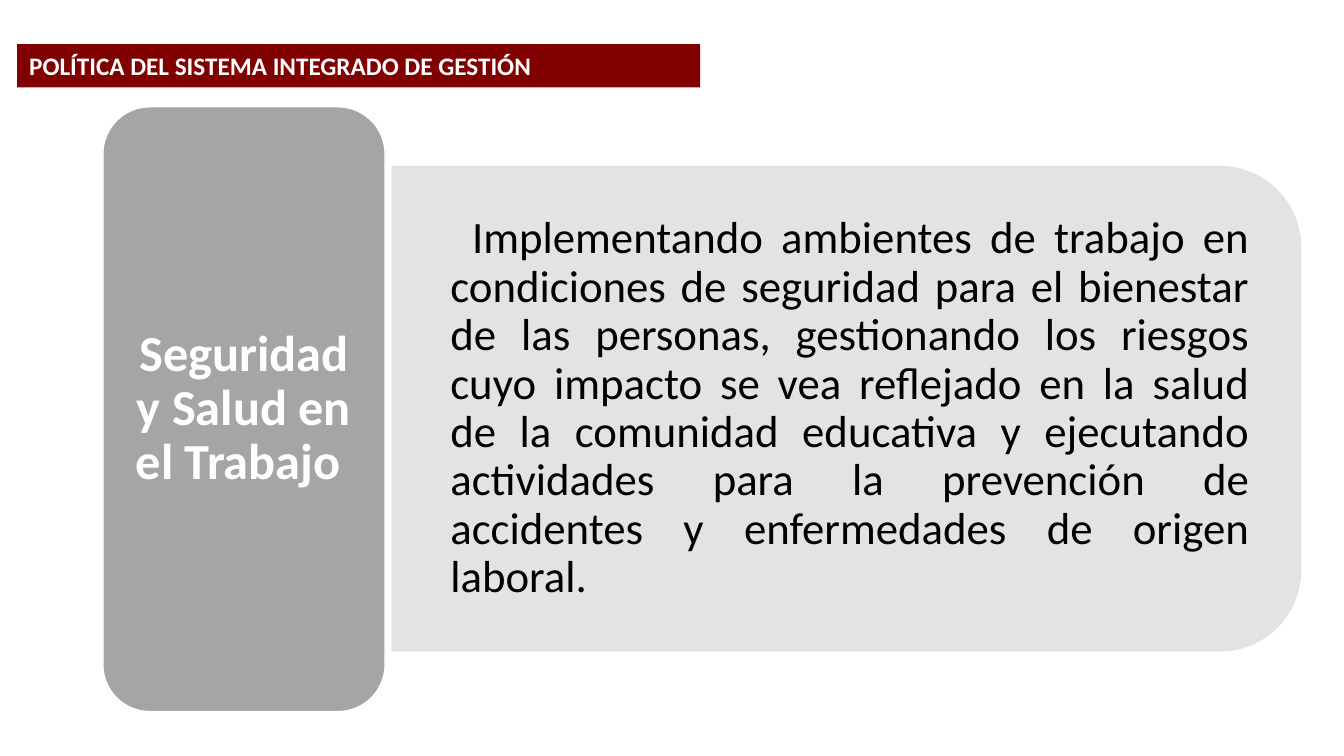
from dataclasses import dataclass

from lxml.etree import SubElement
from pptx import Presentation
from pptx.dml.color import RGBColor
from pptx.enum.shapes import MSO_SHAPE as Shape
from pptx.enum.text import MSO_ANCHOR as Anchor, PP_ALIGN as Align
from pptx.oxml.ns import qn
from pptx.util import Pt


@dataclass(frozen=True)
class Theme:
    font: str = "Calibri"
    banner: str = "800000"
    tile: str = "A5A5A5"
    panel: str = "E1E1E1"
    light: str = "FFFFFF"
    dark: str = "000000"
    title_size: int = 18
    body_size: int = 32
    tile_size: int = 36
    opacity: int = 90


THEME = Theme()


def write_text(shape, text, size, color, bold=False, align=Align.LEFT,
               anchor=Anchor.MIDDLE, insets=(0, 0), spacing=1.0,
               margin=0, first_indent=0):
    frame = shape.text_frame
    frame.word_wrap = True
    frame.vertical_anchor = anchor
    frame.margin_left = frame.margin_right = Pt(insets[0])
    frame.margin_top = frame.margin_bottom = Pt(insets[1])
    para = frame.paragraphs[0]
    para.alignment = align
    para.line_spacing = spacing
    if margin:
        properties = para._p.get_or_add_pPr()
        properties.set("marL", str(Pt(margin)))
        properties.set("indent", str(Pt(first_indent)))
    span = para.add_run()
    span.text = text
    span.font.name = THEME.font
    span.font.size = Pt(size)
    span.font.bold = bold
    span.font.color.rgb = RGBColor.from_string(color)


def add_block(page, kind, box, fill, line=None, opacity=100):
    block = page.shapes.add_shape(kind, *map(Pt, box))
    block.shadow.inherit = False
    block.fill.solid()
    block.fill.fore_color.rgb = RGBColor.from_string(fill)
    if line:
        block.line.color.rgb = RGBColor.from_string(line)
        block.line.width = Pt(1)
    else:
        block.line.fill.background()
    if opacity < 100:
        for color in block._element.spPr.iter(qn("a:srgbClr")):
            SubElement(color, qn("a:alpha"), val=str(opacity * 1000))
    return block


def add_banner(page, box, title):
    banner = add_block(page, Shape.RECTANGLE, box, THEME.banner)
    write_text(banner, title, THEME.title_size, THEME.light, bold=True,
               anchor=Anchor.TOP, insets=(8.64, 4.32))


def add_panel(page, box, text):
    left, top, width, height = box
    # A quarter turn puts the two rounded corners on the right
    turned = (left + (width - height) / 2, top + (height - width) / 2,
              height, width)
    panel = add_block(page, Shape.ROUND_2_SAME_RECTANGLE, turned, THEME.panel,
                      line=THEME.panel, opacity=THEME.opacity)
    panel.rotation = 90
    # Upright text, clear of the rounded corners
    inset = 17
    text_box = page.shapes.add_textbox(
        *map(Pt, (left, top + inset, width - inset, height - 2 * inset)))
    write_text(text_box, text, THEME.body_size, THEME.dark,
               align=Align.JUSTIFY, insets=(19.2, 9.6), spacing=0.9,
               margin=22.5, first_indent=15.5)


def add_tile(page, box, heading):
    tile = add_block(page, Shape.ROUNDED_RECTANGLE, box, THEME.tile,
                     line=THEME.light)
    write_text(tile, heading, THEME.tile_size, THEME.light, bold=True,
               align=Align.CENTER, insets=(10.8, 5.4), spacing=0.9)


def main():
    deck = Presentation()
    deck.slide_width, deck.slide_height = Pt(960), Pt(540)
    page = deck.slides.add_slide(deck.slide_layouts[6])

    add_banner(page, (12.2, 31.5, 488, 31),
               "POLÍTICA DEL SISTEMA INTEGRADO DE GESTIÓN")
    add_panel(page, (280, 119, 649, 346),
              "Implementando ambientes de trabajo en condiciones de seguridad "
              "para el bienestar de las personas, gestionando los riesgos cuyo "
              "impacto se vea reflejado en la salud de la comunidad educativa y "
              "ejecutando actividades para la prevención de accidentes y "
              "enfermedades de origen laboral.")
    add_tile(page, (73.5, 76.3, 201.6, 432),
             "Seguridad y Salud en el Trabajo ")

    deck.save("out.pptx")


if __name__ == "__main__":
    main()
